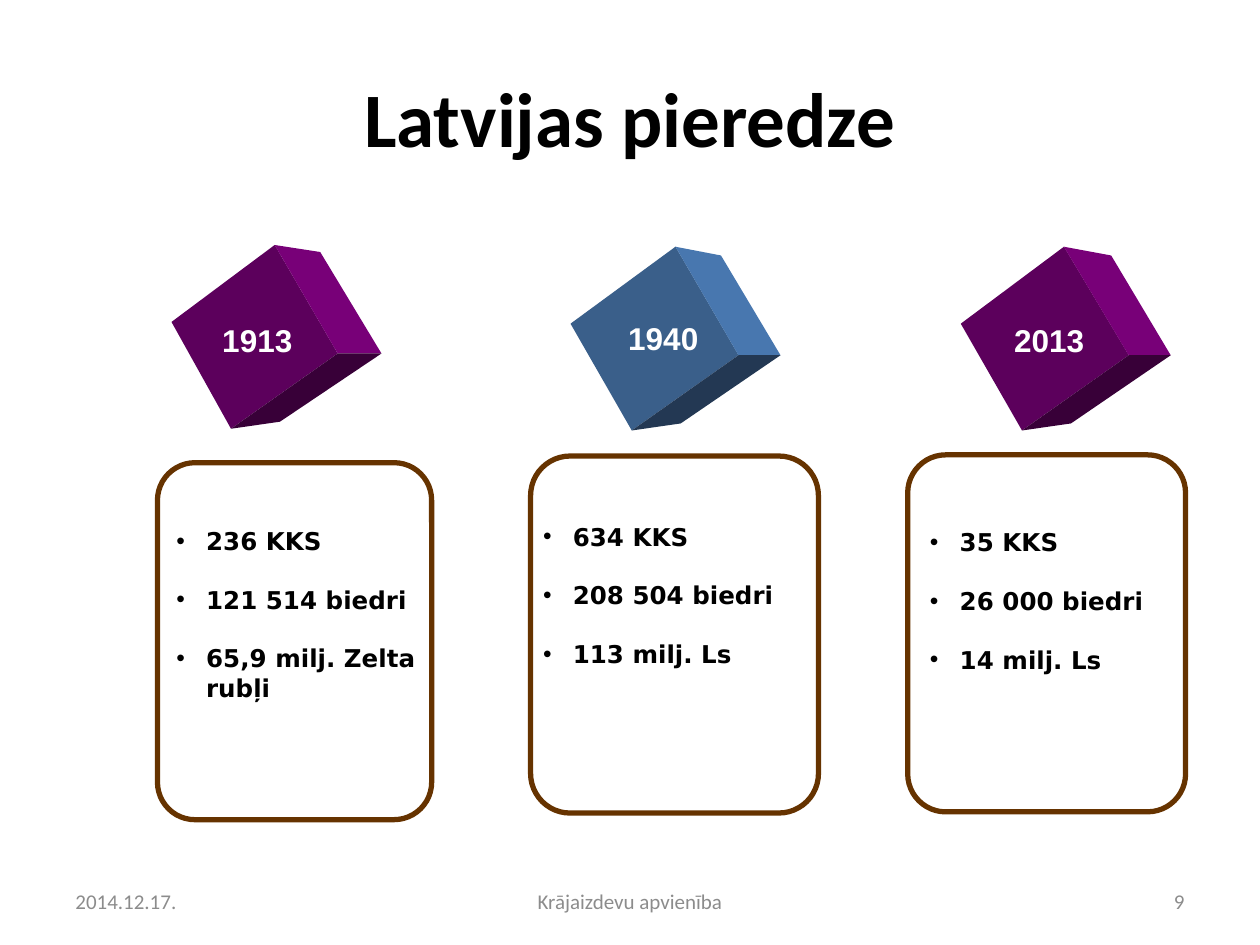
from typing import NamedTuple, Optional

from lxml import etree
from pptx import Presentation
from pptx.dml.color import RGBColor
from pptx.enum import shapes, text
from pptx.oxml import ns
from pptx.util import Pt

COLORS = {
    "black": "000000", "white": "FFFFFF", "grey": "8C8C8C", "brown": "663300",
    "purple": "5C005C", "purple side": "780078", "purple base": "380038",
    "blue": "3A5F8A", "blue side": "4877AF", "blue base": "233853",
}
# Corners of each visible cube face, measured from the cube's top left
FACES = {
    "": [(0, 44), (59, 0), (95.5, 61.7), (34.7, 104.4)],
    " side": [(59, 0), (85.2, 4.3), (120, 61.3), (95.5, 61.7)],
    " base": [(95.5, 61.7), (120, 61.3), (62.7, 100.4), (34.7, 104.4)],
}
LEFT, CENTER, RIGHT = text.PP_ALIGN.LEFT, text.PP_ALIGN.CENTER, text.PP_ALIGN.RIGHT


class Box(NamedTuple):
    left: float
    top: float
    width: float
    height: float


class Era(NamedTuple):
    year: str
    hue: str
    cube: tuple[float, float]
    label: Box
    card: Box
    facts_box: Box
    facts: list[str]


ERAS = [
    Era("1913", "purple", (97.7, 140.2), Box(99, 173.5, 96, 41),
        Box(90, 264.4, 156.7, 204), Box(93.6, 297, 153.4, 110),
        ["236 KKS", "121 514 biedri", "65,9 milj. Zelta rubļi"]),
    Era("1940", "blue", (326.5, 141.3), Box(337, 172.8, 84, 41),
        Box(303.2, 260.6, 164.5, 204), Box(303.1, 294.5, 164.2, 110),
        ["634 KKS", "208 504 biedri", "113 milj. Ls"]),
    Era("2013", "purple", (549.4, 141.3), Box(548.6, 173.5, 102, 41),
        Box(518.7, 259.9, 158.8, 204), Box(524.2, 297.7, 153.4, 95),
        ["35 KKS", "26 000 biedri", "14 milj. Ls"]),
]


def rgb(name: str) -> RGBColor:
    return RGBColor.from_string(COLORS[name])


def place(shape, box: Box) -> None:
    shape.left, shape.top, shape.width, shape.height = map(Pt, box)


def write(shape, lines: list[str], *, size: float, font: str = "Calibri",
          color: str = "black", bold: bool = False, align=LEFT,
          anchor=text.MSO_ANCHOR.MIDDLE, gap: float = 0, bullet: bool = False) -> None:
    frame = shape.text_frame
    frame.word_wrap = True
    frame.auto_size = text.MSO_AUTO_SIZE.NONE
    frame.vertical_anchor = anchor
    frame.text = "\n".join(lines)
    for paragraph in frame.paragraphs:
        paragraph.alignment = align
        paragraph.space_before, paragraph.space_after = Pt(0), Pt(gap)
        if bullet:
            add_bullet(paragraph)
        run_font = paragraph.runs[0].font
        run_font.name, run_font.size, run_font.bold = font, Pt(size), bold
        run_font.color.rgb = rgb(color)


def add_bullet(paragraph) -> None:
    properties = paragraph._p.get_or_add_pPr()
    properties.set("marL", str(Pt(17)))
    properties.set("indent", str(Pt(-17)))
    etree.SubElement(properties, ns.qn("a:buFont"), typeface="Arial")
    etree.SubElement(properties, ns.qn("a:buChar"), char="•")


def paint(shape, fill: Optional[str] = None, line: Optional[str] = None) -> None:
    shape.shadow.inherit = False
    if fill:
        shape.fill.solid()
        shape.fill.fore_color.rgb = rgb(fill)
    else:
        shape.fill.background()
    if line:
        shape.line.color.rgb = rgb(line)
        shape.line.width = Pt(3)
    else:
        shape.line.fill.background()


def add_rounded(slide, box: Box, rounding: float):
    rounded = slide.shapes.add_shape(
        shapes.MSO_SHAPE.ROUNDED_RECTANGLE, *map(Pt, box))
    rounded.adjustments[0] = rounding
    return rounded


def draw_card(slide, box: Box) -> None:
    paint(add_rounded(slide, box, 0.137), "white", "brown")


def draw_cube(slide, era: Era) -> None:
    left, top = era.cube
    for suffix, corners in FACES.items():
        points = [(left + x, top + y) for x, y in corners]
        builder = slide.shapes.build_freeform(*points[0], scale=Pt(1))
        builder.add_line_segments(points[1:], close=True)
        paint(builder.convert_to_shape(), era.hue + suffix)
    label = add_rounded(slide, era.label, 0.5)
    paint(label)
    write(label, [era.year], size=18, font="Arial",
          color="white", bold=True, align=CENTER)


def main() -> None:
    deck = Presentation()
    deck.slide_width, deck.slide_height = Pt(720), Pt(540)
    slide = deck.slides.add_slide(deck.slide_layouts.get_by_name("Comparison"))
    title, *bodies = slide.placeholders

    place(title, Box(36, 21.6, 648, 90))
    write(title, ["Latvijas pieredze"], size=44, bold=True, align=CENTER)

    for era in ERAS:
        draw_card(slide, era.card)
        draw_cube(slide, era)

    for era, body in zip(ERAS, bodies):
        place(body, era.facts_box)
        write(body, era.facts, size=14, font="DejaVu Sans", bold=True,
              anchor=text.MSO_ANCHOR.TOP, gap=16.7, bullet=True)
        slide.shapes._spTree.append(body._element)  # lists lie above the cards
    unused = bodies[len(ERAS)]._element
    unused.getparent().remove(unused)

    for left, width, line, align in [
        (36, 168, "2014.12.17.", LEFT),
        (246, 228, "Krājaizdevu apvienība", CENTER),
        (516, 168, "9", RIGHT),
    ]:
        footer = slide.shapes.add_textbox(*map(Pt, (left, 500.5, width, 28.8)))
        write(footer, [line], size=12, color="grey", align=align)

    deck.save("out.pptx")


if __name__ == "__main__":
    main()
